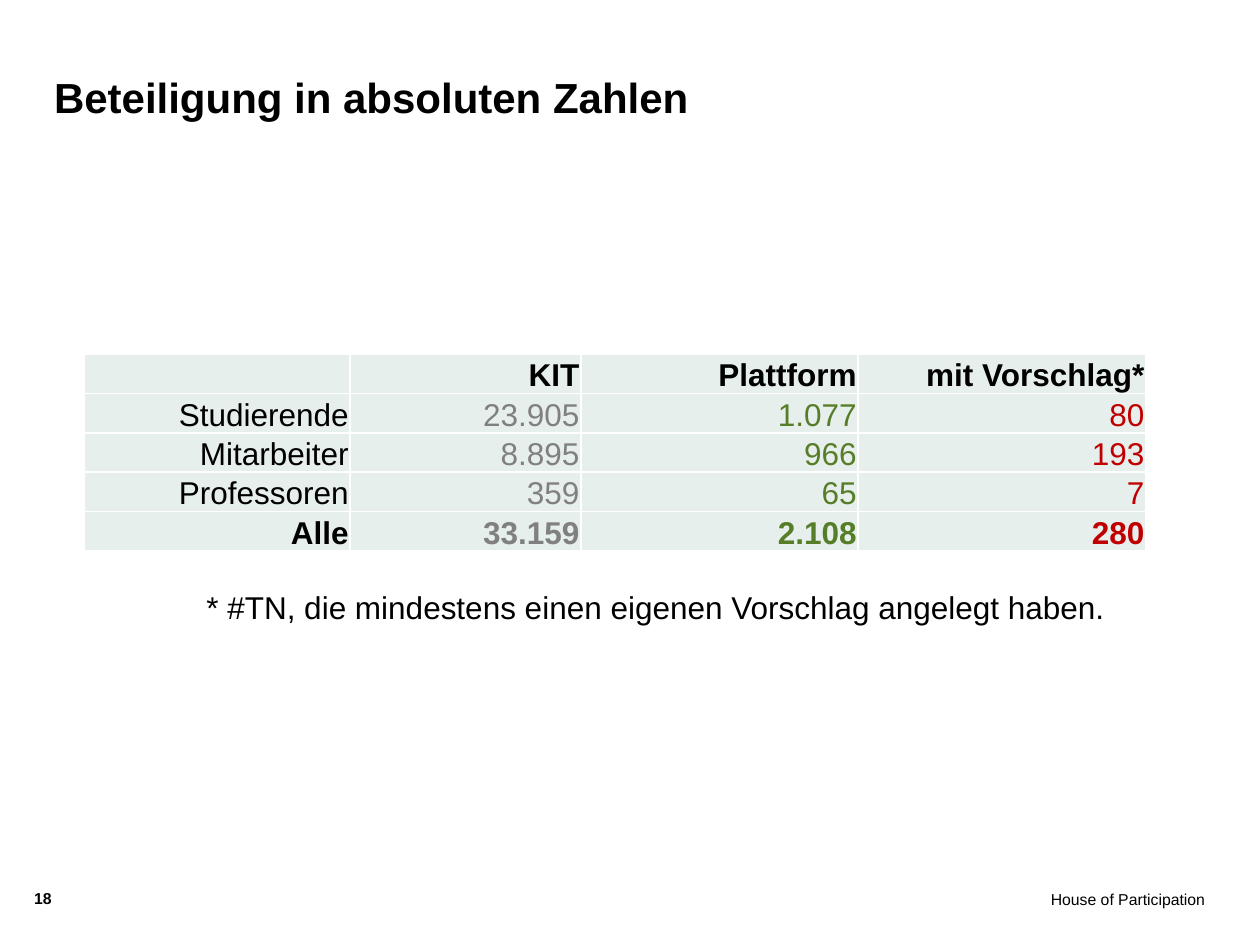
from pptx import Presentation
from pptx.dml.color import RGBColor
from pptx.enum.text import MSO_ANCHOR as Anchor, PP_ALIGN as Align
from pptx.util import Cm, Pt

COLORS = {
    "text": "000000",
    "cell": "E7EFED",
    "total": "808080",
    "platform": "567D27",
    "proposal": "C00000",
}
COLUMN_COLORS = ["text", "total", "platform", "proposal"]
COLUMN_WIDTHS = [5.36, 4.65, 5.59, 5.8]
ROW_HEIGHT = 0.79
PARTICIPATION = [
    ["", "KIT", "Plattform", "mit Vorschlag*"],
    ["Studierende", "23.905", "1.077", "80"],
    ["Mitarbeiter", "8.895", "966", "193"],
    ["Professoren", "359", "65", "7"],
    ["Alle", "33.159", "2.108", "280"],
]


def write(frame, text, size, color="text", bold=False, align=Align.LEFT):
    line = frame.paragraphs[0]
    line.text = text
    line.alignment = align
    line.font.name = "Arial"
    line.font.size = Pt(size)
    line.font.bold = bold
    line.font.color.rgb = RGBColor.from_string(COLORS[color])


def add_label(slide, box, text, size, margins=(0, 0), anchor=Anchor.TOP,
              wrap=True, **style):
    frame = slide.shapes.add_textbox(*map(Cm, box)).text_frame
    frame.margin_left = frame.margin_right = Cm(margins[0])
    frame.margin_top = frame.margin_bottom = Cm(margins[1])
    frame.vertical_anchor = anchor
    frame.word_wrap = wrap
    write(frame, text, size, **style)


def fill_cell(cell, text, color, bold):
    cell.fill.solid()
    cell.fill.fore_color.rgb = RGBColor.from_string(COLORS["cell"])
    cell.vertical_anchor = Anchor.BOTTOM
    cell.margin_left = cell.margin_right = cell.margin_top = Cm(0.03)
    cell.margin_bottom = 0
    write(cell.text_frame, text, 18, color, bold, Align.RIGHT)


def add_participation_table(slide, left, top):
    row_count = len(PARTICIPATION)
    table = slide.shapes.add_table(
        row_count, len(COLUMN_WIDTHS), Cm(left), Cm(top),
        Cm(sum(COLUMN_WIDTHS)), Cm(ROW_HEIGHT * row_count)).table
    table.first_row = False
    table.horz_banding = False
    for column, width in zip(table.columns, COLUMN_WIDTHS):
        column.width = Cm(width)
    for r, values in enumerate(PARTICIPATION):
        table.rows[r].height = Cm(ROW_HEIGHT)
        for c, value in enumerate(values):
            color = COLUMN_COLORS[c] if r else "text"
            fill_cell(table.cell(r, c), value, color,
                      bold=r in (0, row_count - 1))


def main():
    deck = Presentation()
    deck.slide_width, deck.slide_height = Cm(25.4), Cm(19.05)
    slide = deck.slides.add_slide(deck.slide_layouts[6])
    add_label(slide, (16.69, 17.93, 7.6, 1), "House of Participation", 9,
              align=Align.RIGHT)
    add_label(slide, (0.69, 17.91, 0.91, 0.61), "18", 9, bold=True)
    add_label(slide, (1.09, 0.91, 19.2, 1.55),
              "Beteiligung in absoluten Zahlen", 24,
              anchor=Anchor.BOTTOM, bold=True)
    add_label(slide, (3.91, 11.73, 18.8, 1.02),
              "* #TN, die mindestens einen eigenen Vorschlag angelegt haben.",
              18, margins=(0.25, 0.13), wrap=False)
    add_participation_table(slide, 1.7, 7.14)
    deck.save("out.pptx")


if __name__ == "__main__":
    main()
